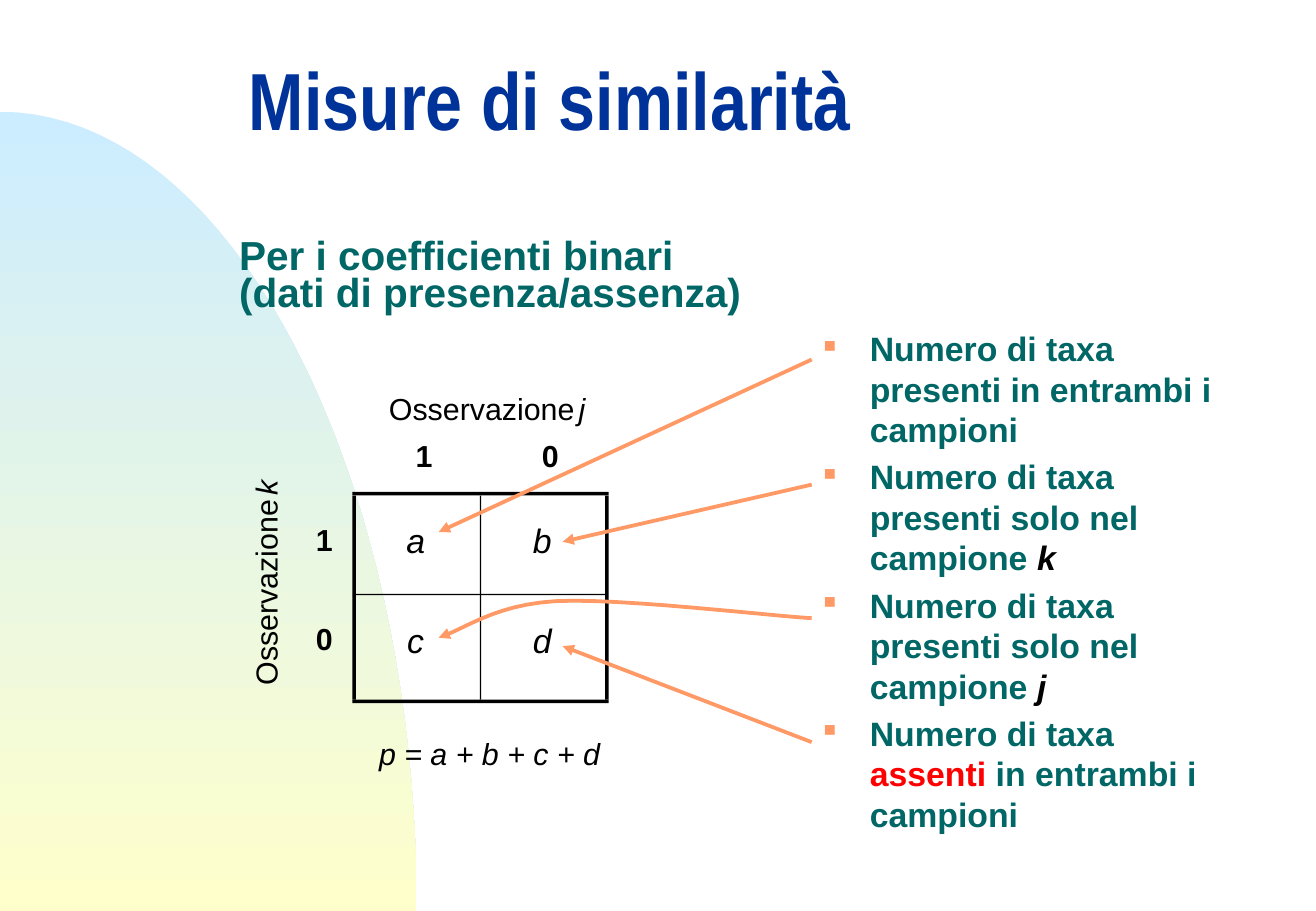
from dataclasses import dataclass
from itertools import product

from lxml.etree import SubElement
from pptx import Presentation
from pptx.dml.color import RGBColor
from pptx.enum.shapes import MSO_CONNECTOR, MSO_SHAPE
from pptx.enum.text import MSO_ANCHOR, MSO_AUTO_SIZE as AUTO, PP_ALIGN
from pptx.oxml.ns import qn
from pptx.util import Inches, Pt

COLORS = {
    "title": "003399", "text": "006666", "accent": "FF9966", "alert": "FF0000",
    "black": "000000", "sky": "CCECFF", "sand": "FFFFCC",
}
Point = tuple[float, float]


@dataclass
class Label:
    text: str
    cx: float
    top: float
    width: float
    size: int = 18
    bold: bool = False
    italic: bool = False
    rotation: int = 0


@dataclass
class Bar:
    left: float
    top: float
    width: float
    height: float


@dataclass
class Span:
    text: str
    color: str = "text"
    italic: bool = False


@dataclass
class Arrow:
    start: Point
    end: Point


def rgb(name: str) -> RGBColor:
    return RGBColor.from_string(COLORS[name])


def add_run(p, text: str, size: int, color: str, bold=False, italic=False, font="Arial") -> None:
    r = p.add_run()
    r.text = text
    r.font.name, r.font.size = font, Pt(size)
    r.font.bold, r.font.italic = bold, italic
    r.font.color.rgb = rgb(color)


def add_box(s, left: float, top: float, width: float, height: float):
    box = s.shapes.add_textbox(Inches(left), Inches(top), Inches(width), Inches(height))
    box.text_frame.word_wrap = True
    return box


def add_label(s, label: Label) -> None:
    height = 0.25 if label.size == 20 else 0.23
    box = add_box(s, label.cx - label.width / 2, label.top, label.width, height)
    box.rotation = label.rotation
    tf = box.text_frame
    tf.margin_left = tf.margin_right = tf.margin_top = tf.margin_bottom = 0
    tf.word_wrap, tf.auto_size = False, AUTO.SHAPE_TO_FIT_TEXT
    p = tf.paragraphs[0]
    p.alignment, p.line_spacing = PP_ALIGN.CENTER, 0.75
    add_run(p, label.text, label.size, "black", label.bold, label.italic)


def add_bar(s, bar: Bar) -> None:
    sp = s.shapes.add_shape(MSO_SHAPE.RECTANGLE, Inches(bar.left), Inches(bar.top),
                            Inches(bar.width), Inches(bar.height))
    sp.shadow.inherit = False
    sp.fill.solid()
    sp.fill.fore_color.rgb = rgb("black")
    sp.line.fill.background()


def curve(a: Point, b: Point, c: Point, d: Point, steps: int = 40) -> list[Point]:
    """Points along a cubic Bézier curve."""
    points = []
    for i in range(steps + 1):
        t = i / steps
        u = 1 - t
        points.append(tuple(u**3 * m + 3 * u * u * t * n + 3 * u * t * t * o + t**3 * q
                            for m, n, o, q in zip(a, b, c, d)))
    return points


def add_outline(s, points: list[Point], close: bool):
    emu = [(Inches(x), Inches(y)) for x, y in points]
    builder = s.shapes.build_freeform(*emu[0])
    builder.add_line_segments(emu[1:], close=close)
    sp = builder.convert_to_shape()
    sp.shadow.inherit = False
    return sp


def style_arrow(line) -> None:
    line.color.rgb = rgb("accent")
    line.width = Pt(2.25)
    SubElement(line._get_or_add_ln(), qn("a:tailEnd"), type="triangle")


def add_arrow(s, arrow: Arrow) -> None:
    cx = s.shapes.add_connector(MSO_CONNECTOR.STRAIGHT, *map(Inches, arrow.start + arrow.end))
    style_arrow(cx.line)
    SubElement(cx._element.spPr, qn("a:effectLst"))


def add_bullet(p) -> None:
    p.space_before = Pt(4)
    pPr = p._p.get_or_add_pPr()
    pPr.set("marL", str(Inches(0.38)))
    pPr.set("indent", str(-Inches(0.38)))
    SubElement(SubElement(pPr, qn("a:buClr")), qn("a:srgbClr"), val=COLORS["accent"])
    SubElement(pPr, qn("a:buSzPct"), val="50000")
    SubElement(pPr, qn("a:buChar"), char="■")


# Contingency table: strips alternate between rule and cell (start, extent)
X_STRIPS = ((2.9, 0.03), (2.93, 1.02), (3.95, 0.01), (3.96, 1.02), (4.98, 0.03))
Y_STRIPS = ((4.05, 0.03), (4.08, 0.81), (4.89, 0.01), (4.9, 0.86), (5.76, 0.03))
BARS = [Bar(x, y, w, h)
        for (row, (y, h)), (col, (x, w)) in product(enumerate(Y_STRIPS), enumerate(X_STRIPS))
        if row % 2 == 0 or col % 2 == 0]
COLUMNS, ROWS = (3.49, 4.53), (4.36, 5.18)
LABELS = [
    Label("Osservazione ", 4, 3.28, 1.6),
    Label("j", 4.79, 3.28, 0.06, italic=True),
    Label("Osservazione ", 2.22, 4.73, 1.6, rotation=270),
    Label("k", 2.22, 3.9, 0.12, italic=True, rotation=270),
    Label("p = a + b + c + d", 4.03, 6.12, 1.86, italic=True),
    *(Label(value, x, 3.67, 0.14, bold=True) for value, x in zip("10", COLUMNS)),
    *(Label(value, 2.67, y, 0.14, bold=True) for value, y in zip("10", ROWS)),
    *(Label(name, x - 0.07, y, 0.15, size=20, italic=True)
      for names, y in zip(("ab", "cd"), ROWS) for name, x in zip(names, COLUMNS)),
]
MEANINGS = [
    [Span("Numero di taxa presenti in entrambi i campioni")],
    *([Span("Numero di taxa presenti solo nel campione "), Span(name, "black", True)] for name in "kj"),
    [Span("Numero di taxa "), Span("assenti", "alert"), Span(" in entrambi i campioni")],
]
ARROWS = [
    Arrow((6.68, 2.96), (3.61, 4.38)),
    Arrow((6.68, 3.99), (4.63, 4.46)),
    Arrow((6.68, 6.11), (4.63, 5.32)),
]


def main() -> None:
    prs = Presentation()
    prs.slide_width, prs.slide_height = Inches(10.83), Inches(7.5)
    s = prs.slides.add_slide(prs.slide_layouts[6])

    # Background arc
    arc = curve((0, 0.92), (1.89, 0.92), (3.43, 3.87), (3.43, 7.5))
    sp = add_outline(s, arc + [(0, 7.5)], close=True)
    sp.line.fill.background()
    sp.fill.gradient()
    sp.fill.gradient_angle = 270
    for stop, name in zip(sp.fill.gradient_stops, ("sky", "sand")):
        stop.color.rgb = rgb(name)

    # Title
    tf = add_box(s, 1.95, 0.28, 7.22, 1.25).text_frame
    tf.vertical_anchor = MSO_ANCHOR.MIDDLE
    p = tf.paragraphs[0]
    p.line_spacing = 0.7
    add_run(p, "Misure di similarità", 48, "title", bold=True, font="Arial Narrow")

    # Table
    for bar in BARS:
        add_bar(s, bar)
    for label in LABELS:
        add_label(s, label)

    # Meaning of each cell
    tf = add_box(s, 6.68, 2.65, 3.55, 4.33).text_frame
    for i, spans in enumerate(MEANINGS):
        p = tf.add_paragraph() if i else tf.paragraphs[0]
        add_bullet(p)
        for span in spans:
            add_run(p, span.text, 20, span.color, True, span.italic)

    # Subtitle
    tf = add_box(s, 1.87, 1.94, 5.2, 0.7).text_frame
    tf.auto_size = AUTO.SHAPE_TO_FIT_TEXT
    p = tf.paragraphs[0]
    p.line_spacing = 0.75
    add_run(p, "Per i coefficienti binari", 24, "text", bold=True)
    p.add_line_break()
    add_run(p, "(dati di presenza/assenza)", 24, "text", bold=True)

    # Arrows from meanings to cells
    for arrow in ARROWS:
        add_arrow(s, arrow)
    bend = (4.57, 4.95)
    sp = add_outline(s, curve((6.68, 5.09), (6.33, 5.07), (5.08, 4.92), bend, 12)
                     + curve(bend, (4.06, 4.98), (3.81, 5.19), (3.61, 5.25), 12)[1:], close=False)
    sp.fill.background()
    style_arrow(sp.line)

    prs.save("out.pptx")


if __name__ == "__main__":
    main()
